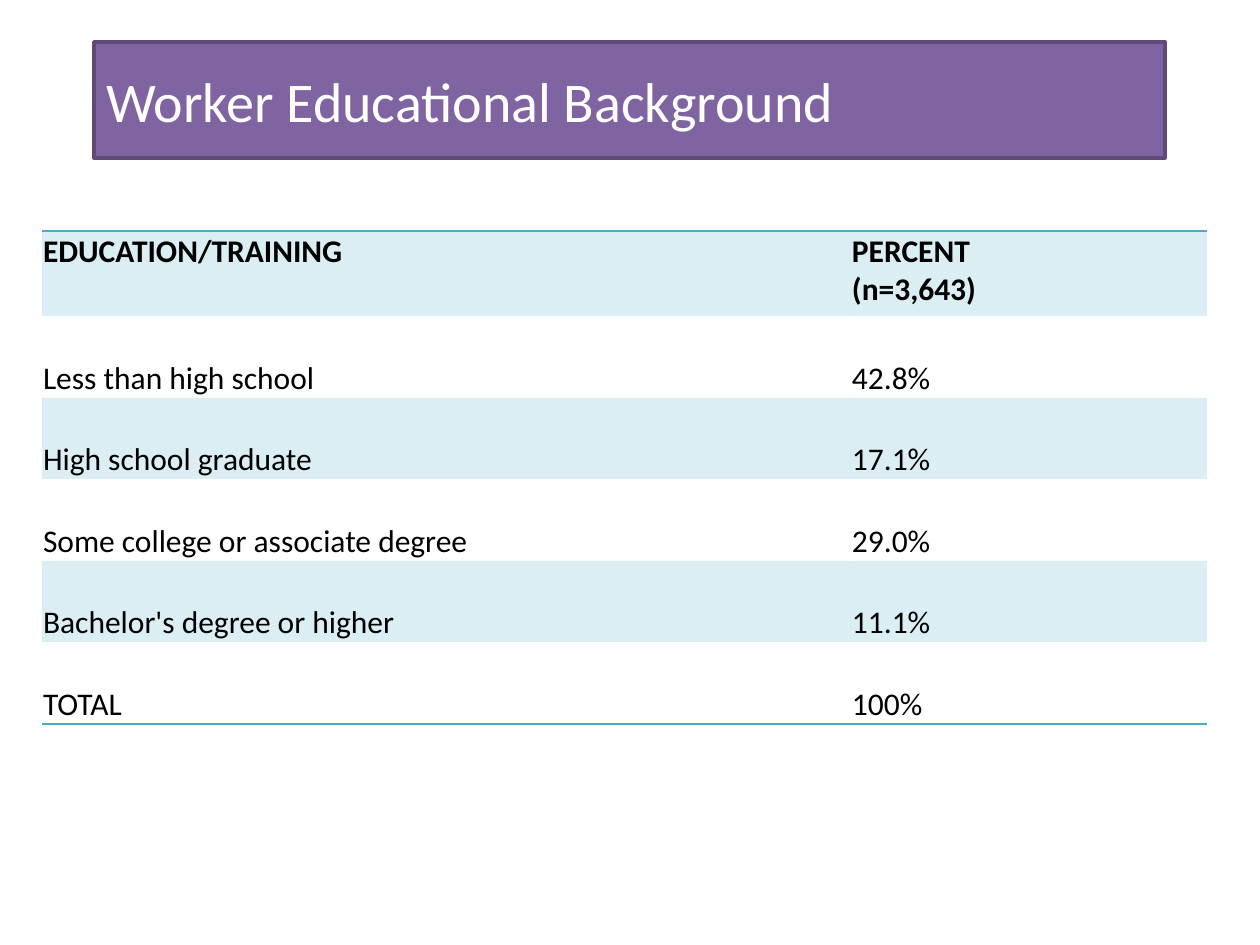
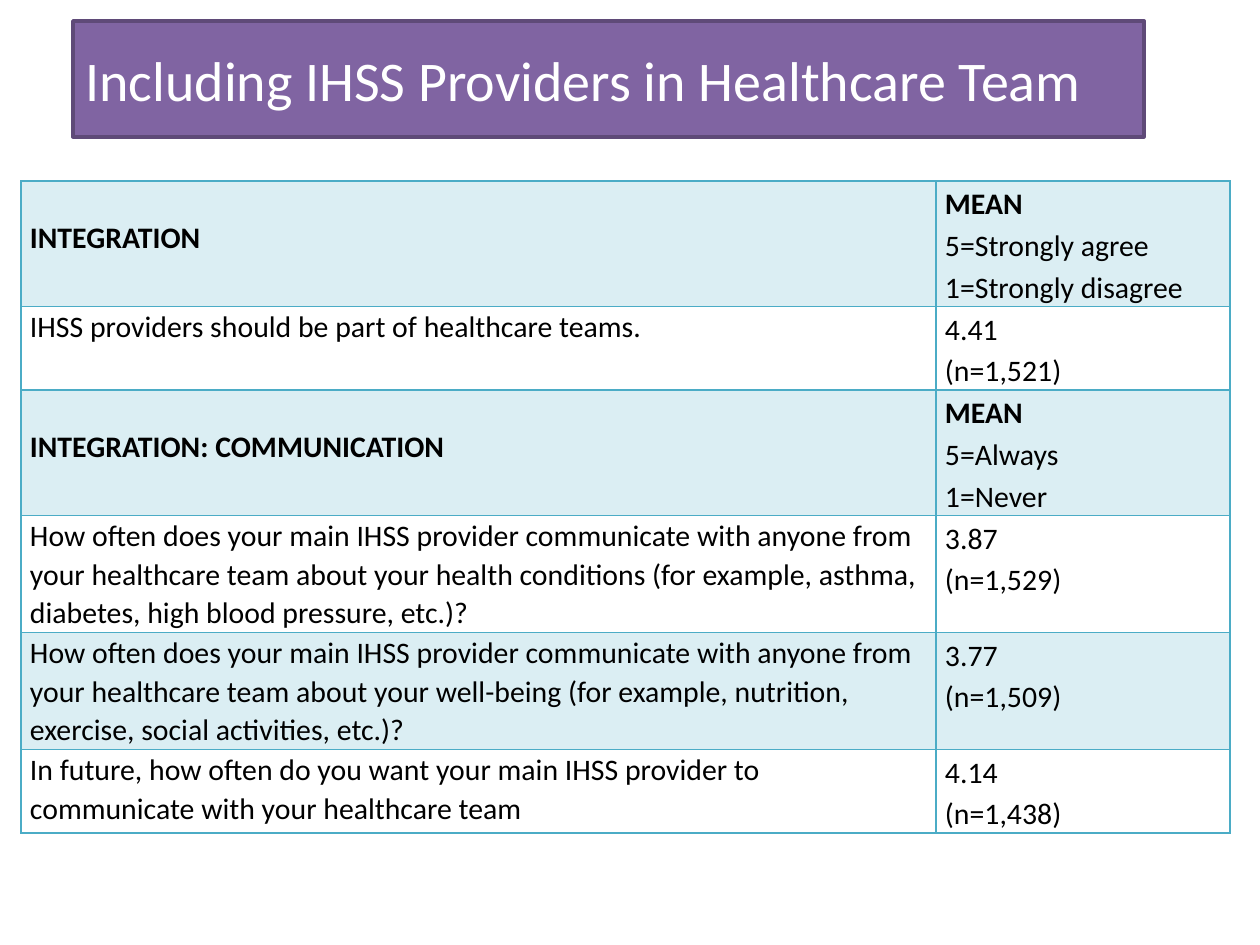
from lxml import etree
from pptx import Presentation
from pptx import util as u
from pptx.dml.color import RGBColor
from pptx.enum import shapes, text
from pptx.oxml.ns import qn

PX = 914400 / 126
FONT = "Calibri"
NO_TABLE_STYLE = "{2D5ABB26-0587-4C30-8999-92F81FD0307C}"
COLORS = {
    "band": "8064A2",
    "band_line": "5F4A78",
    "title": "FFFFFF",
    "accent": "4BACC6",
    "ink": "000000",
}

EDUCATION_ROWS = [
    ("EDUCATION/TRAINING", ["PERCENT", "(n=3,643)"]),
    ("Less than high school", ["42.8%"]),
    ("High school graduate", ["17.1%"]),
    ("Some college or associate degree", ["29.0%"]),
    ("Bachelor's degree or higher", ["11.1%"]),
    ("TOTAL", ["100%"]),
]
INTEGRATION_ROWS = [
    ("INTEGRATION", ["MEAN", "5=Strongly agree", "1=Strongly disagree"]),
    ("IHSS providers should be part of healthcare teams.", ["4.41\n(n=1,521)"]),
    ("INTEGRATION: COMMUNICATION", ["MEAN", "5=Always\n1=Never"]),
    ("How often does your main IHSS provider communicate with anyone from your "
     "healthcare team about your health conditions (for example, asthma, "
     "diabetes, high blood pressure, etc.)?", ["3.87\n(n=1,529)"]),
    ("How often does your main IHSS provider communicate with anyone from your "
     "healthcare team about your well-being (for example, nutrition, exercise, "
     "social activities, etc.)?", ["3.77\n(n=1,509)"]),
    ("In future, how often do you want your main IHSS provider to communicate "
     "with your healthcare team", ["4.14\n(n=1,438)"]),
]
EDUCATION_BOLD = {"EDUCATION/TRAINING", "PERCENT", "(n=3,643)"}
INTEGRATION_HEADS = {"INTEGRATION", "INTEGRATION: COMMUNICATION"}


def px(length):
    return u.Emu(round(length * PX))


def color(name):
    return RGBColor.from_string(COLORS[name])


def set_font(para, size, name, bold=False):
    para.font.name = FONT
    para.font.size = u.Pt(size)
    para.font.bold = bold
    para.font.color.rgb = color(name)


def add_title(slide, left, top, words):
    box = slide.shapes.add_shape(
        shapes.MSO_SHAPE.RECTANGLE, px(left), px(top), px(1071), px(116))
    box.shadow.inherit = False
    box.fill.solid()
    box.fill.fore_color.rgb = color("band")
    box.line.color.rgb = color("band_line")
    box.line.width = u.Pt(2)
    box.text_frame.word_wrap = True
    box.text_frame.vertical_anchor = text.MSO_ANCHOR.MIDDLE
    para = box.text_frame.paragraphs[0]
    para.text = words
    para.alignment = text.PP_ALIGN.LEFT
    set_font(para, 32, "title")


def add_table(slide, left, top, widths, heights):
    frame = slide.shapes.add_table(
        len(heights), len(widths), px(left), px(top),
        px(sum(widths)), px(sum(heights)))
    table = frame.table
    table.first_row = table.horz_banding = False
    frame._element.find(".//" + qn("a:tableStyleId")).text = NO_TABLE_STYLE
    for column, width in zip(table.columns, widths):
        column.width = px(width)
    for row, height in zip(table.rows, heights):
        row.height = px(height)
    return table


def add_borders(cell, sides):
    properties = cell._tc.get_or_add_tcPr()
    for side in sides:
        line = etree.SubElement(properties, qn("a:ln" + side), w=str(u.Pt(1)))
        fill = etree.SubElement(line, qn("a:solidFill"))
        etree.SubElement(fill, qn("a:srgbClr"), val=COLORS["accent"])


def tint(cell):
    cell.fill.solid()
    cell.fill.fore_color.rgb = color("accent")
    tone = cell._tc.tcPr.find(qn("a:solidFill")).find(qn("a:srgbClr"))
    etree.SubElement(tone, qn("a:alpha"), val="20000")


def set_margins(cell, side, top):
    cell.margin_left = cell.margin_right = px(side)
    cell.margin_top = px(top)
    cell.margin_bottom = 0


def fill_cell(cell, lines, size, bold, spacing):
    for index, line in enumerate(lines):
        frame = cell.text_frame
        para = frame.add_paragraph() if index else frame.paragraphs[0]
        para.text = line
        para.line_spacing = spacing
        set_font(para, size, "ink", line in bold)


def build_education(slide):
    heights = [85, 82, 81, 82, 81, 82]
    table = add_table(slide, 42, 231, [809, 356], heights)
    borders = {0: "T", len(heights) - 1: "B"}
    for r, (label, percent) in enumerate(EDUCATION_ROWS):
        for c, lines in enumerate([[label], percent]):
            cell = table.cell(r, c)
            set_margins(cell, 1, 1)
            if r:
                cell.vertical_anchor = text.MSO_ANCHOR.BOTTOM
            add_borders(cell, borders.get(r, ""))
            if r % 2 == 0:
                tint(cell)
            fill_cell(cell, lines, 18, EDUCATION_BOLD, 1.0)
    add_title(slide, 94, 42, "Worker Educational Background")


def build_integration(slide):
    table = add_table(slide, 21, 181, [915, 294], [125, 83, 125, 117, 117, 83])
    for r, (question, mean) in enumerate(INTEGRATION_ROWS):
        for c, (lines, spacing) in enumerate([([question], 1.07), (mean, 1.15)]):
            cell = table.cell(r, c)
            set_margins(cell, 9, 37 if lines[0] in INTEGRATION_HEADS else 0)
            add_borders(cell, "LRTB")
            if r % 2 == 0:
                tint(cell)
            fill_cell(cell, lines, 17, INTEGRATION_HEADS | {"MEAN"}, spacing)
    add_title(slide, 73, 21, "Including IHSS Providers in Healthcare Team")


def main():
    deck = Presentation()
    deck.slide_width, deck.slide_height = px(1260), px(945)
    for build in (build_education, build_integration):
        build(deck.slides.add_slide(deck.slide_layouts[6]))
    deck.save("out.pptx")


if __name__ == "__main__":
    main()
